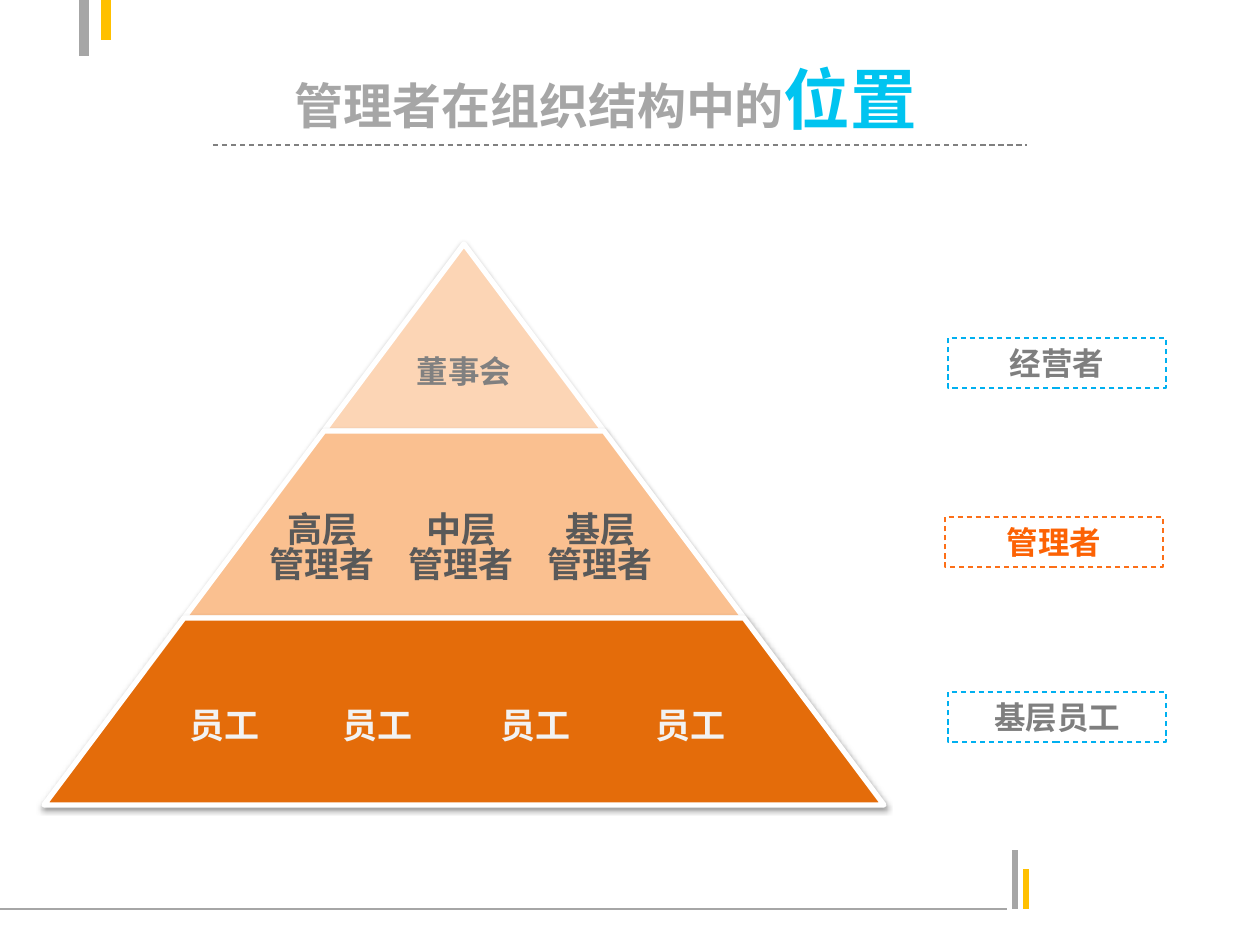
"""Build the slide on where managers sit in an organisation."""
import dataclasses

import lxml.etree
import pptx
import pptx.dml.color
import pptx.enum.dml
import pptx.enum.shapes
import pptx.enum.text
import pptx.oxml
import pptx.oxml.ns
import pptx.util


@dataclasses.dataclass(frozen=True)
class Theme:
    latin: str = "Arial"
    chinese: str = "Noto Sans CJK SC"
    title_size: int = 28
    accent_size: int = 38
    label_size: int = 18
    level_size: int = 20
    white: str = "FFFFFF"
    silver: str = "A6A6A6"
    gray: str = "808080"
    label_gray: str = "7F7F7F"
    dark: str = "595959"
    light: str = "F2F2F2"
    gold: str = "FFC000"
    cyan: str = "00C4F0"
    blue: str = "00B0F0"
    orange_line: str = "FC6F18"
    orange_text: str = "FC6204"
    tiers: tuple = ("FCD5B5", "FAC090", "E46C0A")


THEME = Theme()
SCALE = 914400 / 126
color = pptx.dml.color.RGBColor.from_string
DASH = pptx.enum.dml.MSO_LINE.DASH
ALIGN = pptx.enum.text.PP_ALIGN


def px(*lengths):
    return [round(length * SCALE) for length in lengths]


def style_text(text_frame, size, text_color, align, latin=THEME.chinese, spacing=1.0):
    text_frame.auto_size = pptx.enum.text.MSO_AUTO_SIZE.NONE
    text_frame.vertical_anchor = pptx.enum.text.MSO_ANCHOR.MIDDLE
    for paragraph in text_frame.paragraphs:
        paragraph.alignment = align
        paragraph.line_spacing = spacing
        for run in paragraph.runs:
            run.font.size = pptx.util.Pt(size)
            run.font.bold = True
            run.font.color.rgb = color(text_color)
            run.font.name = latin
            east_asian = lxml.etree.SubElement(run.font._element, pptx.oxml.ns.qn("a:ea"))
            east_asian.set("typeface", THEME.chinese)


presentation = pptx.Presentation()
presentation.slide_width, presentation.slide_height = px(1260, 945)
slide = presentation.slides.add_slide(presentation.slide_layouts[5])
shapes = slide.shapes

title = shapes.title
title.left, title.top, title.width, title.height = px(282, 66, 684, 63)
title.text_frame.text = "管理者在组织结构中的"
title.text_frame.paragraphs[0].add_run().text = "位置"
title.text_frame.word_wrap = False
style_text(title.text_frame, THEME.title_size, THEME.silver, ALIGN.LEFT, THEME.latin)
accent = title.text_frame.paragraphs[0].runs[1].font
accent.name = THEME.chinese
accent.size = pptx.util.Pt(THEME.accent_size)
accent.color.rgb = color(THEME.cyan)

rules = [
    (0, 909, 1007, 909, THEME.silver, 0.75, None),
    (1015, 909, 1015, 850, THEME.silver, 3, None),
    (1026, 909, 1026, 869, THEME.gold, 3, None),
    (84, 56, 84, 0, THEME.silver, 6, None),
    (106, 0, 106, 40, THEME.gold, 6, None),
    (213, 145, 1027, 145, THEME.gray, 0.75, DASH),
]
for *ends, line_color, width, dash in rules:
    rule = shapes.add_connector(pptx.enum.shapes.MSO_CONNECTOR.STRAIGHT, *px(*ends))
    rule.line.color.rgb = color(line_color)
    rule.line.width = pptx.util.Pt(width)
    rule.line.dash_style = dash
    lxml.etree.SubElement(rule._element.spPr, pptx.oxml.ns.qn("a:effectLst"))

roles = [
    ("经营者", 948, 338, THEME.blue, THEME.label_gray),
    ("管理者", 945, 517, THEME.orange_line, THEME.orange_text),
    ("基层员工", 948, 692, THEME.blue, THEME.label_gray),
]
for text, left, top, line_color, text_color in roles:
    role = shapes.add_shape(
        pptx.enum.shapes.MSO_SHAPE.RECTANGLE, *px(left, top, 218, 50))
    role.shadow.inherit = False
    role.fill.background()
    role.line.color.rgb = color(line_color)
    role.line.width = pptx.util.Pt(0.75)
    role.line.dash_style = DASH
    role.text_frame.text = text
    style_text(role.text_frame, THEME.label_size, text_color, ALIGN.CENTER)

SHADOW = (
    f'<a:effectLst {pptx.oxml.ns.nsdecls("a")}>'
    '<a:outerShdw blurRad="39370" dist="20320" dir="5400000" rotWithShape="0">'
    '<a:srgbClr val="000000"><a:alpha val="38000"/></a:srgbClr>'
    '</a:outerShdw></a:effectLst>'
)
center, apex, tier_height, tier_spread = 464, 244, 187, 140
for index, fill_color in enumerate(THEME.tiers):
    top, bottom = apex + index * tier_height, apex + (index + 1) * tier_height
    upper, lower = index * tier_spread, (index + 1) * tier_spread
    builder = shapes.build_freeform(center - lower, bottom, scale=SCALE)
    builder.add_line_segments(
        [(center - upper, top), (center + upper, top), (center + lower, bottom)])
    tier = builder.convert_to_shape()
    tier.fill.solid()
    tier.fill.fore_color.rgb = color(fill_color)
    tier.line.color.rgb = color(THEME.white)
    tier.line.width = pptx.util.Pt(3)
    tier._element.spPr.append(pptx.oxml.parse_xml(SHADOW))

staff = [("员工", left, 692, 205, 67, THEME.level_size, THEME.light)
         for left in (122, 275, 433, 588)]
managers = [(f"{level}\n管理者", 233 + index * 139, 495, 179, 101,
             THEME.level_size, THEME.dark)
            for index, level in enumerate(("高层", "中层", "基层"))]
board = [("董事会", 389, 338, 150, 67, THEME.label_size, THEME.gray)]
for text, left, top, width, height, size, text_color in staff + board + managers:
    label = shapes.add_shape(
        pptx.enum.shapes.MSO_SHAPE.SNIP_2_SAME_RECTANGLE, *px(left, top, width, height))
    label.shadow.inherit = False
    label.fill.background()
    label.line.fill.background()
    label.text_frame.text = text
    style_text(label.text_frame, size, text_color, ALIGN.CENTER, spacing=0.83)

presentation.save("out.pptx")
